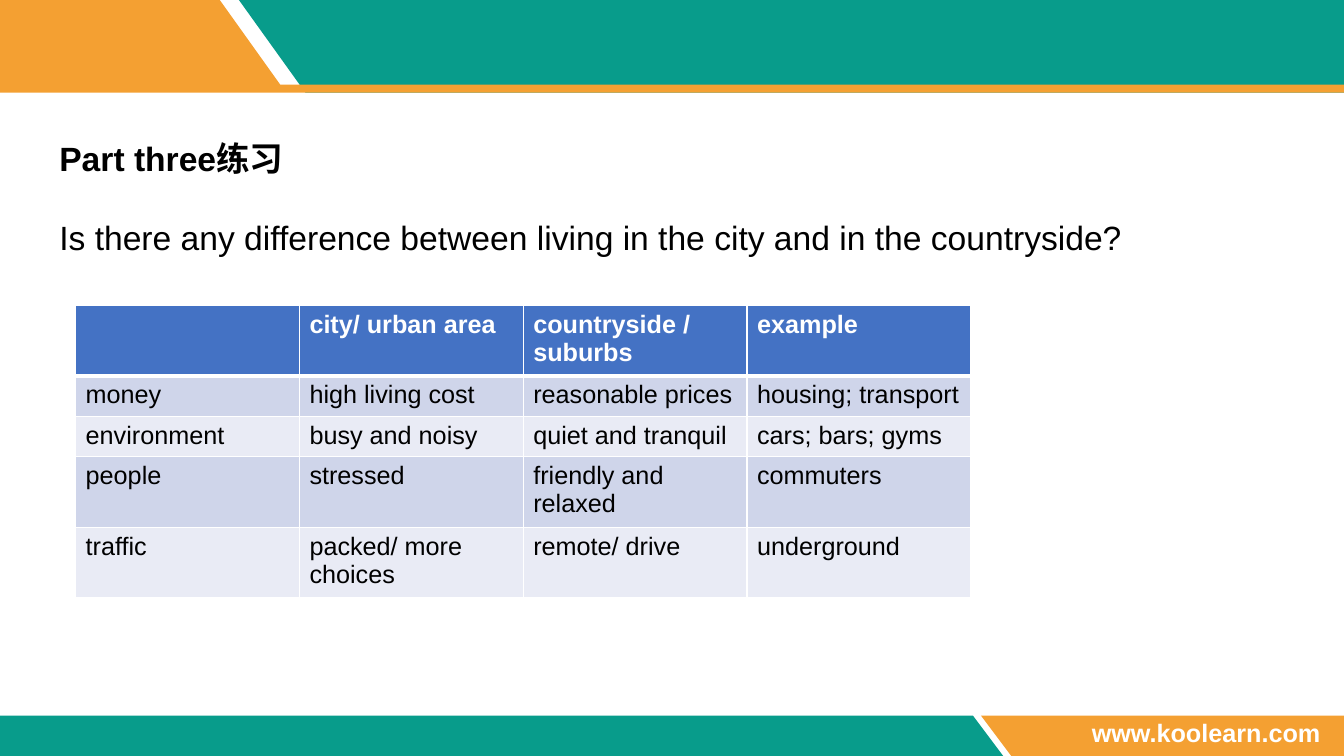
from lxml import etree
from pptx import Presentation
from pptx.dml.color import RGBColor
from pptx.enum.text import MSO_AUTO_SIZE
from pptx.oxml import parse_xml
from pptx.oxml.ns import nsdecls
from pptx.util import Inches, Pt

TEAL, ORANGE, WHITE, BLACK = "089C8B", "F4A032", "FFFFFF", "000000"
HEADER, BANDS = "4472C4", ("E9EBF5", "CFD5EA")

BARS = [
    (TEAL, [(2.37, 0), (3.03, 0.92), (13.33, 0.92), (13.33, 0)]),
    (ORANGE, [(0, 0), (2.18, 0), (2.78, 0.84), (13.33, 0.84), (13.33, 0.92), (0, 0.92)]),
    (TEAL, [(0, 7.1), (9.65, 7.1), (9.95, 7.5), (0, 7.5)]),
    (ORANGE, [(9.73, 7.1), (13.33, 7.1), (13.33, 7.5), (10.03, 7.5)]),
]
ROWS = [
    ("", "city/ urban area", "countryside / suburbs", "example"),
    ("money", "high living cost", "reasonable prices", "housing; transport"),
    ("environment", "busy and noisy", "quiet and tranquil", "cars; bars; gyms"),
    ("people", "stressed", "friendly and relaxed", "commuters"),
    ("traffic", "packed/ more choices", "remote/ drive", "underground"),
]
ROW_HEIGHTS = (0.7, 0.4, 0.4, 0.7, 0.7)
COL_WIDTH = 2.22


def rgb(value):
    """Return the colour for a hex string."""
    return RGBColor.from_string(value)


def style(p, size, color, bold=False):
    """Set the font of a paragraph."""
    font = p.font
    font.name, font.size, font.bold = "Arial", Pt(size), bold
    font.color.rgb = rgb(color)


def add_bar(s, color, points):
    """Draw a filled polygon from points in inches."""
    (x, y), *rest = [(Inches(px), Inches(py)) for px, py in points]
    builder = s.shapes.build_freeform(x, y)
    builder.add_line_segments(rest, close=True)
    sp = builder.convert_to_shape()
    sp.shadow.inherit = False
    sp.fill.solid()
    sp.fill.fore_color.rgb = rgb(color)
    sp.line.fill.background()


def add_text(s, box, lines, size, color, wrap=True, gap=0):
    """Add a text box of (text, bold) lines with a gap between them."""
    tf = s.shapes.add_textbox(*map(Inches, box)).text_frame
    tf.word_wrap = wrap
    tf.auto_size = MSO_AUTO_SIZE.SHAPE_TO_FIT_TEXT
    for i, (text, bold) in enumerate(lines):
        p = tf.add_paragraph() if i else tf.paragraphs[0]
        p.text = text
        style(p, size, color, bold)
        if i:
            p.space_before = Pt(gap)


def add_borders(cell, top, bottom):
    """Give a cell white borders, 1 pt at the sides."""
    tc_pr = cell._tc.get_or_add_tcPr()
    for i, (side, width) in enumerate(zip("LRTB", (1, 1, top, bottom))):
        ln = parse_xml(f'<a:ln{side} {nsdecls("a")} w="{Pt(width)}"/>')
        fill = etree.SubElement(ln, ln.tag.replace(f"ln{side}", "solidFill"))
        etree.SubElement(fill, ln.tag.replace(f"ln{side}", "srgbClr"), val=WHITE)
        tc_pr.insert(i, ln)


def add_comparison(s, left, top):
    """Add the table that compares city and countryside."""
    n_cols = len(ROWS[0])
    size = Inches(COL_WIDTH * n_cols), Inches(sum(ROW_HEIGHTS))
    table = s.shapes.add_table(len(ROWS), n_cols, Inches(left), Inches(top), *size).table
    for col in table.columns:
        col.width = Inches(COL_WIDTH)
    for r, texts in enumerate(ROWS):
        table.rows[r].height = Inches(ROW_HEIGHTS[r])
        is_header = r == 0
        for c, text in enumerate(texts):
            cell = table.cell(r, c)
            cell.fill.solid()
            cell.fill.fore_color.rgb = rgb(HEADER if is_header else BANDS[r % 2])
            add_borders(cell, 3 if r == 1 else 1, 3 if is_header else 1)
            cell.text = text
            style(cell.text_frame.paragraphs[0], 18, WHITE if is_header else BLACK, is_header)


def main():
    """Build the slide and save it."""
    prs = Presentation()
    prs.slide_width, prs.slide_height = Inches(13.33), Inches(7.5)
    s = prs.slides.add_slide(prs.slide_layouts[6])
    for color, points in BARS:
        add_bar(s, color, points)
    add_text(s, (10.73, 7.07, 2.49, 0.4), [("www.koolearn.com", True)], 18, WHITE, wrap=False)
    question = "Is there any difference between living in the city and in the countryside?"
    add_text(s, (0.49, 1.32, 12.68, 1.3), [("Part three练习", True), (question, False)],
             24, BLACK, gap=27.6)
    add_comparison(s, 0.75, 3.03)
    prs.save("out.pptx")


if __name__ == "__main__":
    main()
